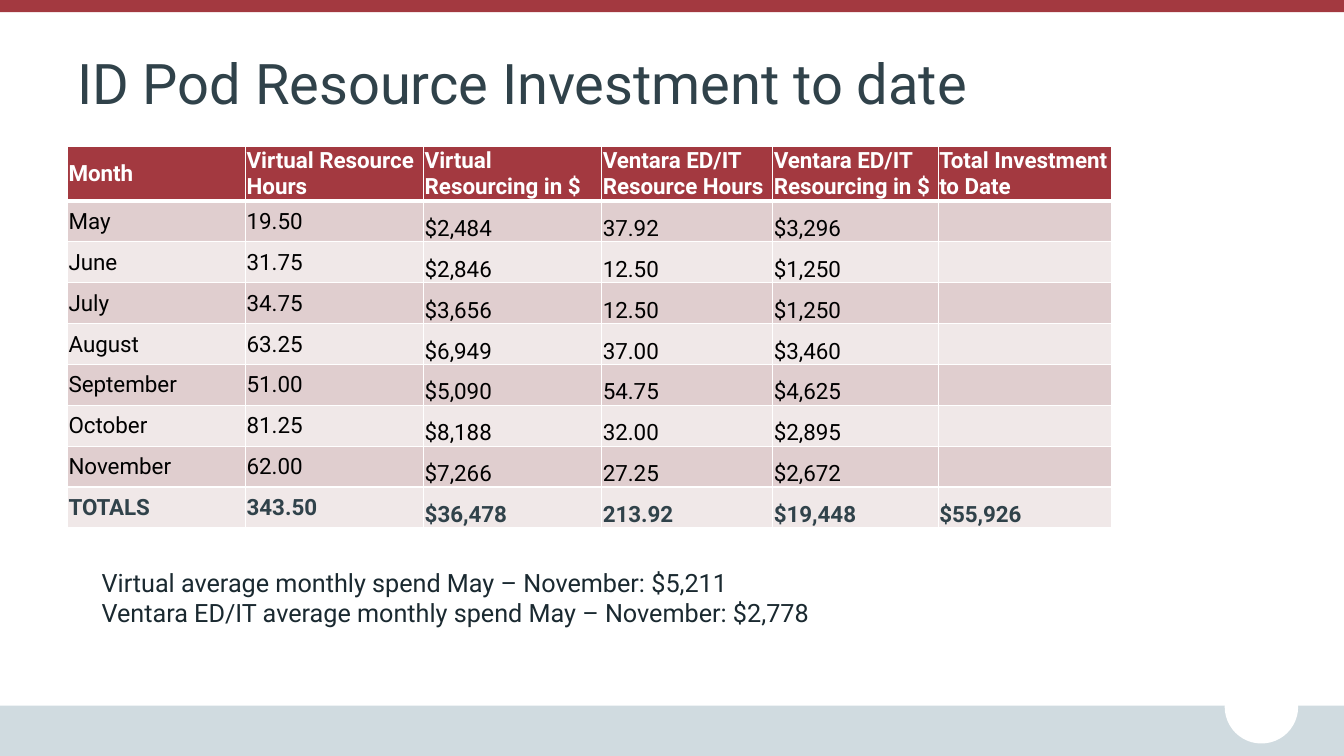
from lxml.etree import SubElement
from pptx import Presentation
from pptx.dml.color import RGBColor
from pptx.enum.shapes import MSO_SHAPE
from pptx.enum.text import MSO_ANCHOR
from pptx.oxml.ns import qn
from pptx.util import Pt

WHITE = RGBColor(0xFF, 0xFF, 0xFF)
BLACK = RGBColor(0x00, 0x00, 0x00)
CRIMSON = RGBColor(0xA3, 0x39, 0x40)
MIST = RGBColor(0xD0, 0xDB, 0xE0)
SLATE = RGBColor(0x30, 0x42, 0x4A)
INK = RGBColor(0x1A, 0x29, 0x30)
ROSE = RGBColor(0xE0, 0xCE, 0xCF)
PALE_ROSE = RGBColor(0xF0, 0xE8, 0xE8)

SLIDE_WIDTH, SLIDE_HEIGHT = 960, 540
COLUMN_WIDTHS = [127.2, 127.2, 127.2, 122.2, 118.2, 124]
HEADER_HEIGHT, ROW_HEIGHT = 38.6, 29.2

HEADERS = ["Month", "Virtual Resource Hours", "Virtual Resourcing in $",
           "Ventara ED/IT Resource Hours", "Ventara ED/IT Resourcing in $",
           "Total Investment to Date"]
MONTHS = [
    ["May", "19.50", "$2,484", "37.92", "$3,296", ""],
    ["June", "31.75", "$2,846", "12.50", "$1,250", ""],
    ["July", "34.75", "$3,656", "12.50", "$1,250", ""],
    ["August", "63.25", "$6,949", "37.00", "$3,460", ""],
    ["September", "51.00", "$5,090", "54.75", "$4,625", ""],
    ["October", "81.25", "$8,188", "32.00", "$2,895", ""],
    ["November", "62.00", "$7,266", "27.25", "$2,672", ""],
]
TOTALS = ["TOTALS", "343.50", "$36,478", "213.92", "$19,448", "$55,926"]
AVERAGES = ["Virtual average monthly spend May – November: $5,211",
            "Ventara ED/IT average monthly spend May – November: $2,778"]


class SlideBuilder:
    font_name = "Roboto"
    table_size = 16

    def __init__(self, slide):
        self.slide = slide

    def style(self, paragraph, size, color, bold=False):
        font = paragraph.font
        font.name, font.size, font.bold = self.font_name, Pt(size), bold
        font.color.rgb = color

    def shape(self, preset, left, top, width, height, color):
        shape = self.slide.shapes.add_shape(
            preset, Pt(left), Pt(top), Pt(width), Pt(height))
        shape.shadow.inherit = False
        shape.fill.solid()
        shape.fill.fore_color.rgb = color
        shape.line.fill.background()

    def text(self, lines, left, top, width, height, size, color,
             anchor=MSO_ANCHOR.TOP):
        box = self.slide.shapes.add_textbox(
            Pt(left), Pt(top), Pt(width), Pt(height))
        frame = box.text_frame
        frame.word_wrap = True
        frame.vertical_anchor = anchor
        frame.text = "\n".join(lines)
        for paragraph in frame.paragraphs:
            self.style(paragraph, size, color)

    def borders(self, cell, top, bottom):
        """Draw white cell edges; top and bottom are widths in points."""
        properties = cell._tc.get_or_add_tcPr()
        for edge, width in (("L", 1), ("R", 1), ("T", top), ("B", bottom)):
            line = SubElement(properties, qn(f"a:ln{edge}"), w=str(Pt(width)))
            fill = SubElement(line, qn("a:solidFill"))
            SubElement(fill, qn("a:srgbClr"), val=str(WHITE))

    def table(self, rows, left, top):
        last = len(rows) - 1
        table = self.slide.shapes.add_table(
            len(rows), len(COLUMN_WIDTHS), Pt(left), Pt(top),
            Pt(sum(COLUMN_WIDTHS)), Pt(HEADER_HEIGHT + last * ROW_HEIGHT)).table
        for column, width in zip(table.columns, COLUMN_WIDTHS):
            column.width = Pt(width)
        for r, values in enumerate(rows):
            table.rows[r].height = Pt(ROW_HEIGHT if r else HEADER_HEIGHT)
            if r == 0:
                fill, color = CRIMSON, WHITE
            else:
                fill = ROSE if r % 2 else PALE_ROSE
                color = SLATE if r == last else BLACK
            for c, value in enumerate(values):
                cell = table.cell(r, c)
                cell.margin_left = cell.margin_right = cell.margin_top = Pt(0.7)
                cell.margin_bottom = 0
                middle = r == 0 or c < 2
                cell.vertical_anchor = (
                    MSO_ANCHOR.MIDDLE if middle else MSO_ANCHOR.BOTTOM)
                self.borders(cell, top=3 if r == 1 else 1,
                             bottom=3 if r == 0 else 1)
                cell.fill.solid()
                cell.fill.fore_color.rgb = fill
                cell.text = value
                self.style(cell.text_frame.paragraphs[0], self.table_size,
                           color, bold=r in (0, last))


def main():
    presentation = Presentation()
    presentation.slide_width = Pt(SLIDE_WIDTH)
    presentation.slide_height = Pt(SLIDE_HEIGHT)
    builder = SlideBuilder(
        presentation.slides.add_slide(presentation.slide_layouts[6]))

    builder.shape(MSO_SHAPE.RECTANGLE, 0, 504, SLIDE_WIDTH, 36, MIST)
    builder.shape(MSO_SHAPE.RECTANGLE, 0, 0, SLIDE_WIDTH, 8.8, CRIMSON)
    builder.shape(MSO_SHAPE.OVAL, 874.8, 478.6, 52.5, 52.5, WHITE)
    builder.text(["ID Pod Resource Investment to date"], 48, 21.6, 864, 74,
                 40, SLATE, MSO_ANCHOR.MIDDLE)
    builder.text(AVERAGES, 65.5, 401.8, 646, 51, 18, INK)
    builder.table([HEADERS, *MONTHS, TOTALS], 48.3, 104.4)

    presentation.save("out.pptx")


if __name__ == "__main__":
    main()
